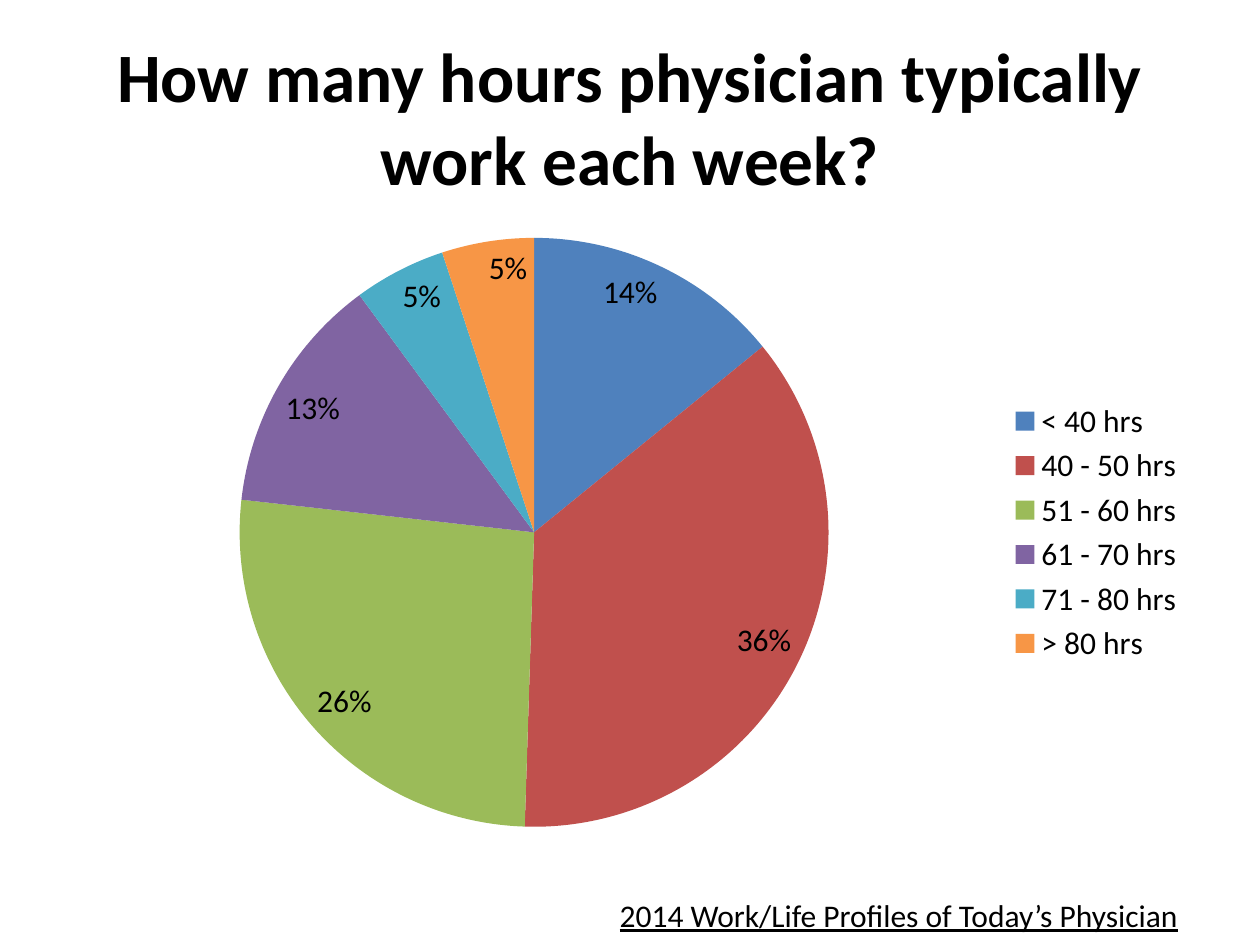
from pptx import Presentation
from pptx import util as u
from pptx.chart import data as cd
from pptx.dml import color
from pptx.enum import chart as ce, text as te

FACE = "Calibri"
BLACK = "000000"
HOURS = [
    ("< 40 hrs", 14, "4F81BD"),
    ("40 - 50 hrs", 36, "C0504D"),
    ("51 - 60 hrs", 26, "9BBB59"),
    ("61 - 70 hrs", 13, "8064A2"),
    ("71 - 80 hrs", 5, "4BACC6"),
    ("> 80 hrs", 5, "F79646"),
]


def paint(target, shade):
    """Set a colour format from a hex string."""
    target.rgb = color.RGBColor.from_string(shade)


def style(font, size, bold=False, line=False):
    """Set face, size, weight, underline and colour of a font."""
    font.name, font.size = FACE, u.Pt(size)
    font.bold, font.underline = bold, line
    paint(font.color, BLACK)


def write(slide, words, box, size=18, align=te.PP_ALIGN.LEFT,
          anchor=te.MSO_ANCHOR.TOP, wrap=True, **look):
    """Add a text box with one formatted paragraph."""
    frame = slide.shapes.add_textbox(*map(u.Inches, box)).text_frame
    frame.word_wrap, frame.vertical_anchor = wrap, anchor
    para = frame.paragraphs[0]
    para.alignment = align
    run = para.add_run()
    run.text = words
    style(run.font, size, **look)


def draw_pie(slide, rows, box):
    """Add a pie chart with percent labels and a legend on the right."""
    data = cd.CategoryChartData()
    data.categories = [name for name, _, _ in rows]
    data.add_series("Series 1", [value for _, value, _ in rows])
    chart = slide.shapes.add_chart(
        ce.XL_CHART_TYPE.PIE, *map(u.Inches, box), data).chart
    style(chart.font, 18)
    chart.has_title = False
    chart.has_legend = True
    chart.legend.position = ce.XL_LEGEND_POSITION.RIGHT
    chart.legend.include_in_layout = False
    plot = chart.plots[0]
    plot.vary_by_categories = True
    for spot, (_, _, shade) in enumerate(rows):
        fill = plot.series[0].points[spot].format.fill
        fill.solid()
        paint(fill.fore_color, shade)
    plot.has_data_labels = True
    labels = plot.data_labels
    labels.show_percentage, labels.show_value = True, False
    labels.number_format, labels.number_format_is_linked = "0%", False
    labels.position = ce.XL_LABEL_POSITION.INSIDE_END


def main():
    """Build and save the slide."""
    deck = Presentation()
    deck.slide_width, deck.slide_height = u.Inches(10), u.Inches(7.5)
    slide = deck.slides.add_slide(deck.slide_layouts[6])
    write(slide, "How many hours physician typically work each week?",
          (0.5, 0.3, 9, 1.25), size=39.6, bold=True,
          align=te.PP_ALIGN.CENTER, anchor=te.MSO_ANCHOR.MIDDLE)
    draw_pie(slide, HOURS, (0.5, 1.75, 9, 4.95))
    write(slide, "2014 Work/Life Profiles of Today’s Physician",
          (4.82, 7.06, 4.68, 0.4), wrap=False, line=True)
    deck.save("out.pptx")


if __name__ == "__main__":
    main()
